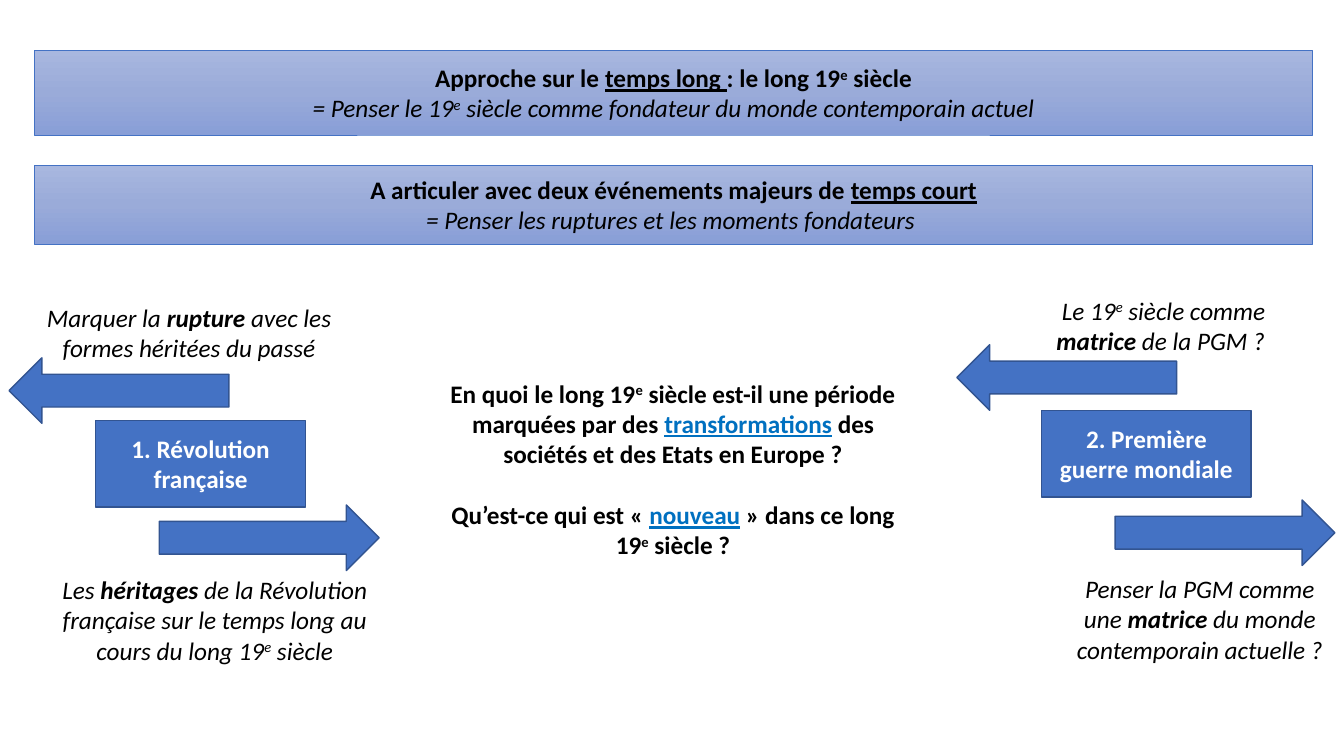
from copy import deepcopy
from dataclasses import dataclass
from functools import partial

from pptx import Presentation
from pptx.dml.color import RGBColor
from pptx.enum.shapes import MSO_SHAPE as Shape
from pptx.enum.text import MSO_ANCHOR as Anchor, PP_ALIGN as Align
from pptx.shapes.autoshape import Shape as AutoShape
from pptx.slide import Slide
from pptx.text.text import TextFrame
from pptx.util import Emu, Pt

PX = 9144


@dataclass(frozen=True)
class Theme:
    font: str = "Calibri"
    size: int = 18
    paragraph_gap: int = 22
    black: str = "000000"
    white: str = "FFFFFF"
    blue: str = "4472C4"
    edge: str = "325491"
    accent: str = "0070C0"
    gradient: tuple[str, ...] = ("A8B7DF", "9AABD9", "889ED7")


THEME = Theme()


@dataclass(frozen=True)
class Run:
    text: str
    bold: bool = False
    italic: bool = False
    underline: bool = False
    superscript: bool = False
    color: str = THEME.black


@dataclass(frozen=True)
class Box:
    x: int
    y: int
    w: int
    h: int
    paragraphs: tuple[tuple[Run, ...], ...]


@dataclass(frozen=True)
class Arrow:
    x: int
    y: int
    rotation: int = 0
    w: int = 218
    h: int = 65


Bold = partial(Run, bold=True)
Italic = partial(Run, italic=True)
Strong = partial(Run, bold=True, italic=True)
Key = partial(Run, bold=True, underline=True, color=THEME.accent)
Label = partial(Run, bold=True, color=THEME.white)
BOLD_E = Bold("e", superscript=True)
ITALIC_E = Italic("e", superscript=True)

BANNERS = (
    Box(34, 50, 1268, 84, (
        (Bold("Approche sur le "), Bold("temps long ", underline=True),
         Bold(": le long 19"), BOLD_E, Bold(" siècle")),
        (Italic("= Penser le 19"), ITALIC_E,
         Italic(" siècle comme fondateur du monde contemporain actuel")),
    )),
    Box(34, 164, 1268, 78, (
        (Bold("A articuler avec deux événements majeurs de "),
         Bold("temps court", underline=True)),
        (Italic("= Penser les ruptures et les moments fondateurs "),),
    )),
)

EVENTS = (
    Box(95, 417, 208, 86, ((Label("1. Révolution française"),),)),
    Box(1033, 407, 208, 86, ((Label("2. Première guerre mondiale"),),)),
)

ARROWS = (
    Arrow(9, 355, 180),
    Arrow(158, 501),
    Arrow(949, 342, 180),
    Arrow(1106, 496),
)

NOTES = (
    Box(34, 295, 307, 71, (
        (Italic("Marquer la "), Strong("rupture"),
         Italic(" avec les formes héritées du passé")),
    )),
    Box(36, 565, 354, 101, (
        (Italic("Les "), Strong("héritages"),
         Italic(" de la Révolution française sur le temps long au cours du long 19"),
         ITALIC_E, Italic(" siècle")),
    )),
    Box(1015, 288, 278, 71, (
        (Italic("Le 19"), ITALIC_E, Italic(" siècle comme "),
         Strong("matrice"), Italic(" de la PGM ? ")),
    )),
    Box(1057, 564, 266, 101, (
        (Italic("Penser la PGM comme une "), Strong("matrice"),
         Italic(" du monde contemporain actuelle ?")),
    )),
    Box(433, 370, 469, 192, (
        (Bold("En quoi le long 19"), BOLD_E,
         Bold(" siècle est-il une période marquées par des "),
         Key("transformations"),
         Bold(" des sociétés et des Etats en Europe ?")),
        (Bold("Qu’est-ce qui est « "), Key("nouveau"),
         Bold(" » dans ce long 19"), BOLD_E, Bold(" siècle ?")),
    )),
)


def px(*lengths: int) -> list[Emu]:
    return [Emu(n * PX) for n in lengths]


def rgb(color: str) -> RGBColor:
    return RGBColor.from_string(color)


def write(tf: TextFrame, box: Box, gap: int = 0) -> None:
    tf.word_wrap = True
    for i, runs in enumerate(box.paragraphs):
        p = tf.add_paragraph() if i else tf.paragraphs[0]
        p.alignment = Align.CENTER
        p.space_before = Pt(gap if i else 0)
        for run in runs:
            r = p.add_run()
            r.text = run.text
            r.font.name = THEME.font
            r.font.size = Pt(THEME.size)
            r.font.bold = run.bold
            r.font.italic = run.italic
            r.font.underline = run.underline
            r.font.color.rgb = rgb(run.color)
            if run.superscript:
                r._r.get_or_add_rPr().set("baseline", "30000")


def add_shape(s: Slide, kind: Shape, item: Box | Arrow,
              edge: str = THEME.edge, width: float = 1) -> AutoShape:
    sp = s.shapes.add_shape(kind, *px(item.x, item.y, item.w, item.h))
    sp.shadow.inherit = False
    sp.fill.solid()
    sp.fill.fore_color.rgb = rgb(THEME.blue)
    sp.line.color.rgb = rgb(edge)
    sp.line.width = Pt(width)
    return sp


def add_event(s: Slide, box: Box) -> None:
    sp = add_shape(s, Shape.RECTANGLE, box)
    sp.text_frame.vertical_anchor = Anchor.MIDDLE
    write(sp.text_frame, box)


def add_banner(s: Slide, box: Box) -> None:
    sp = add_shape(s, Shape.RECTANGLE, box, THEME.blue, 0.5)
    sp.fill.gradient()
    sp.fill.gradient_angle = 270
    first = sp.fill.gradient_stops[0]._gs
    first.addnext(deepcopy(first))
    for i, (stop, color) in enumerate(zip(sp.fill.gradient_stops, THEME.gradient)):
        stop.position = i / 2
        stop.color.rgb = rgb(color)
    sp.text_frame.vertical_anchor = Anchor.MIDDLE
    write(sp.text_frame, box)


def add_arrow(s: Slide, arrow: Arrow) -> None:
    add_shape(s, Shape.RIGHT_ARROW, arrow).rotation = arrow.rotation


def add_note(s: Slide, box: Box) -> None:
    sp = s.shapes.add_textbox(*px(box.x, box.y, box.w, box.h))
    write(sp.text_frame, box, THEME.paragraph_gap)


def main() -> None:
    prs = Presentation()
    prs.slide_width, prs.slide_height = px(1333, 750)
    s = prs.slides.add_slide(prs.slide_layouts[6])
    for banner in BANNERS:
        add_banner(s, banner)
    for arrow in ARROWS:
        add_arrow(s, arrow)
    for event in EVENTS:
        add_event(s, event)
    for note in NOTES:
        add_note(s, note)
    prs.save("out.pptx")


if __name__ == "__main__":
    main()
